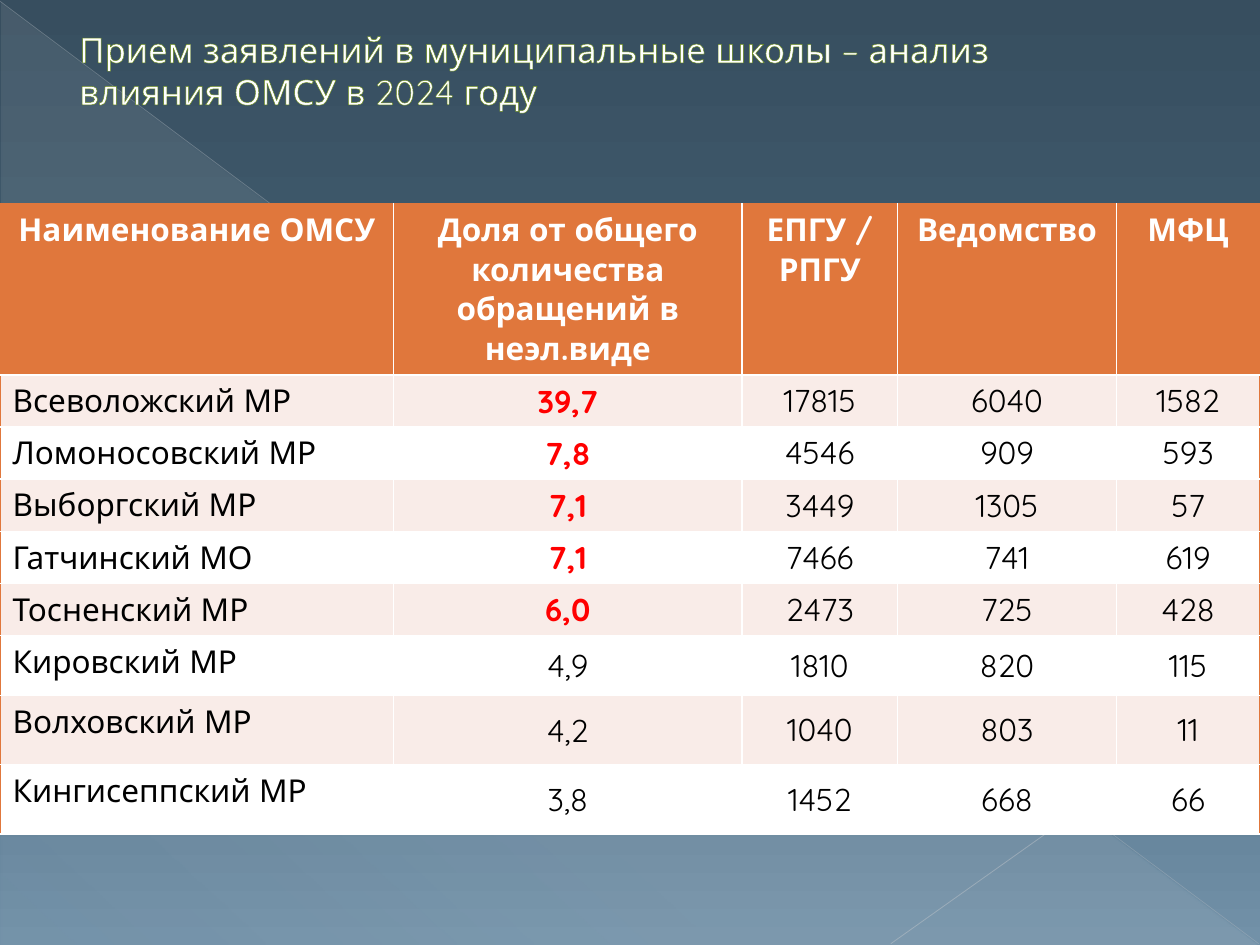
from lxml import etree
from pptx import Presentation
from pptx.dml.color import RGBColor
from pptx.enum.shapes import MSO_CONNECTOR, MSO_SHAPE
from pptx.enum.text import MSO_ANCHOR, PP_ALIGN
from pptx.oxml.ns import qn
from pptx.util import Pt

LEFT, CENTER = PP_ALIGN.LEFT, PP_ALIGN.CENTER
TOP, MIDDLE = MSO_ANCHOR.TOP, MSO_ANCHOR.MIDDLE
STRAIGHT, TRIANGLE = MSO_CONNECTOR.STRAIGHT, MSO_SHAPE.RIGHT_TRIANGLE

TITLE = "Прием заявлений в муниципальные школы – анализ влияния ОМСУ в 2024 году"
HEADER = ["Наименование ОМСУ", "Доля от общего количества обращений в неэл.виде",
          "ЕПГУ / РПГУ", "Ведомство", "МФЦ"]
DISTRICTS = [
    ("Всеволожский МР", "39,7", "17815", "6040", "1582"),
    ("Ломоносовский МР", "7,8", "4546", "909", "593"),
    ("Выборгский МР", "7,1", "3449", "1305", "57"),
    ("Гатчинский МО", "7,1", "7466", "741", "619"),
    ("Тосненский МР", "6,0", "2473", "725", "428"),
    ("Кировский МР", "4,9", "1810", "820", "115"),
    ("Волховский МР", "4,2", "1040", "803", "11"),
    ("Кингисеппский МР", "3,8", "1452", "668", "66"),
]
HIGHLIGHTED = 5
COLUMN_WIDTHS = [225, 199, 89, 125, 82]
ROW_HEIGHTS = [97.6] + [29.8] * 5 + [34.2, 39.6, 39.6]
TABLE_TOP = 116.64
PAGE_WIDTH, PAGE_HEIGHT = 720, 540

THEME = {
    "font": "Quicksand", "title_size": 19.8, "table_size": 18, "title_leading": 24,
    "white": "FFFFFF", "black": "000000", "red": "FF0000", "accent": "E0773C",
    "band": "F9ECE8", "title_outline": "698A18",
    "background": [(0, "374E5F", 100), (60, "49687E", 100), (100, "7291A8", 100)],
    "sheen": [(0, "E7ECED", 10), (70, "E7ECED", 8), (100, "E7ECED", 1)],
}
RAYS = [((0, 0.72), (719.28, 539.28), "BAC0C6", 0.39, 35),
        ((720, 389.52), (509.04, 539.28), "C2C7CC", 0.47, 45)]


def add_color(parent, color, opacity=100):
    node = etree.SubElement(parent, qn("a:srgbClr"), val=color)
    if opacity < 100:
        etree.SubElement(node, qn("a:alpha"), val=str(opacity * 1000))


def set_gradient(fill, element, stops, angle):
    fill.gradient()
    gradient = element.find(".//" + qn("a:gradFill"))
    for child in list(gradient):
        gradient.remove(child)
    stop_list = etree.SubElement(gradient, qn("a:gsLst"))
    for position, color, opacity in stops:
        stop = etree.SubElement(stop_list, qn("a:gs"), pos=str(position * 1000))
        add_color(stop, color, opacity)
    etree.SubElement(gradient, qn("a:lin"), ang=str(angle * 60000), scaled="0")


def outline(tag, color, width):
    line = etree.Element(qn(tag), w=str(Pt(width)))
    add_color(etree.SubElement(line, qn("a:solidFill")), color)
    return line


def write(frame, text, *, size, color, bold=False, align=LEFT, leading=None, edge=None):
    para = frame.paragraphs[0]
    para.alignment = align
    if leading:
        para.line_spacing = Pt(leading)
    span = para.add_run()
    span.text = text
    span.font.name = THEME["font"]
    span.font.size = Pt(size)
    span.font.bold = bold
    span.font.color.rgb = RGBColor.from_string(color)
    if edge:
        span.font._element.insert(0, outline("a:ln", edge, 0.5))


def add_backdrop(page):
    set_gradient(page.background.fill, page.element, THEME["background"], 90)
    sheen = page.shapes.add_shape(TRIANGLE, Pt(0.72), Pt(1.44), Pt(718.56), Pt(538.56))
    sheen.shadow.inherit = False
    sheen.line.fill.background()
    set_gradient(sheen.fill, sheen.element, THEME["sheen"], 133)
    for start, end, color, width, opacity in RAYS:
        ray = page.shapes.add_connector(STRAIGHT, *map(Pt, start + end))
        ray.line.width = Pt(width)
        ray.line.color.rgb = RGBColor.from_string(color)
        tint = ray.element.spPr.find(".//" + qn("a:srgbClr"))
        etree.SubElement(tint, qn("a:alpha"), val=str(opacity * 1000))
        etree.SubElement(ray.element.spPr, qn("a:effectLst"))


def add_title(page):
    box = page.shapes.add_textbox(Pt(38.2), Pt(12.4), Pt(609.8), Pt(56))
    box.text_frame.word_wrap = True
    write(box.text_frame, TITLE, size=THEME["title_size"], color=THEME["white"],
          leading=THEME["title_leading"], edge=THEME["title_outline"])


def style_cell(cell, text, row, column):
    header, share = row == 0, column == 1
    alert = share and 0 < row <= HIGHLIGHTED
    color = THEME["white"] if header else THEME["red"] if alert else THEME["black"]
    fill = THEME["accent"] if header else THEME["band"] if row % 2 else THEME["white"]
    cell.fill.solid()
    cell.fill.fore_color.rgb = RGBColor.from_string(fill)
    cell.vertical_anchor = TOP if header or column == 0 else MIDDLE
    if share and not header:
        cell.margin_left = cell.margin_right = cell.margin_top = Pt(0.72)
        cell.margin_bottom = Pt(0)
    write(cell.text_frame, text, size=THEME["table_size"], color=color,
          bold=header or alert, align=CENTER if header or column else LEFT)
    outer_sides = {"L": column == 0, "R": column == len(HEADER) - 1, "T": header, "B": False}
    properties = cell._tc.get_or_add_tcPr()
    for index, (side, outer) in enumerate(outer_sides.items()):
        edge_color = THEME["accent"] if outer else THEME["white"]
        properties.insert(index, outline("a:ln" + side, edge_color, 1))


def add_district_table(page):
    rows = [HEADER, *DISTRICTS]
    frame = page.shapes.add_table(len(rows), len(HEADER), Pt(0), Pt(TABLE_TOP),
                                  Pt(PAGE_WIDTH), Pt(sum(ROW_HEIGHTS)))
    table = frame.table
    for column, width in zip(table.columns, COLUMN_WIDTHS):
        column.width = Pt(width)
    for row, height in zip(table.rows, ROW_HEIGHTS):
        row.height = Pt(height)
    for row, values in enumerate(rows):
        for column, text in enumerate(values):
            style_cell(table.cell(row, column), text, row, column)


def main():
    deck = Presentation()
    deck.slide_width, deck.slide_height = Pt(PAGE_WIDTH), Pt(PAGE_HEIGHT)
    page = deck.slides.add_slide(deck.slide_layouts[6])
    add_backdrop(page)
    add_title(page)
    add_district_table(page)
    deck.save("out.pptx")


if __name__ == "__main__":
    main()
